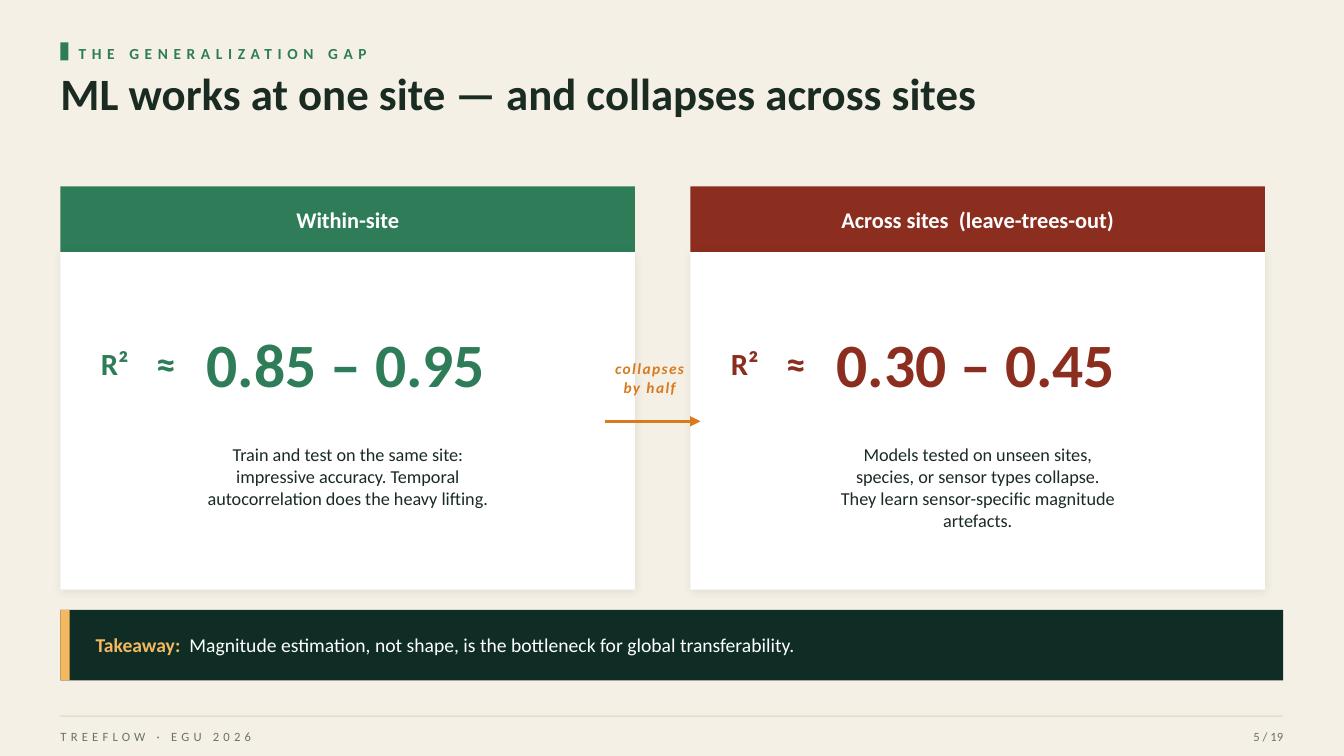
from lxml import etree
from pptx import Presentation
from pptx import util as u
from pptx.dml import color
from pptx.enum import shapes, text
from pptx.oxml import ns

COLOURS = {
    "paper": "F4F0E6", "ink": "1A2B22", "green": "2E7D58", "red": "8B2E1F",
    "white": "FFFFFF", "orange": "D97A1F", "forest": "0F2D24",
    "amber": "F4B860", "rule": "D8D2C2", "muted": "6B7268", "black": "000000",
}
LEFT, TOP, MIDDLE = text.PP_ALIGN.LEFT, text.MSO_ANCHOR.TOP, text.MSO_ANCHOR.MIDDLE
CENTER, RIGHT = text.PP_ALIGN.CENTER, text.PP_ALIGN.RIGHT
MARGIN, CONTENT_WIDTH = 43.2, 873.36


def rgb(name):
    return color.RGBColor.from_string(COLOURS[name])


def points(*lengths):
    return [u.Pt(length) for length in lengths]


def style(size, colour, spacing=0, **flags):
    return {"colour": colour, "spacing": spacing,
            "font": {"name": "Calibri", "size": u.Pt(size), **flags}}


def add_block(slide, box, colour):
    block = slide.shapes.add_shape(shapes.MSO_SHAPE.RECTANGLE, *points(*box))
    block.shadow.inherit = False
    block.fill.solid()
    block.fill.fore_color.rgb = rgb(colour)
    block.line.fill.background()
    return block


def add_soft_shadow(block):
    effects = block._element.spPr.find(ns.qn("a:effectLst"))
    shadow = etree.SubElement(effects, ns.qn("a:outerShdw"), blurRad=str(u.Pt(6)),
                              dist=str(u.Pt(1)), dir="5400000", rotWithShape="0")
    tint = etree.SubElement(shadow, ns.qn("a:srgbClr"), val=COLOURS["black"])
    etree.SubElement(tint, ns.qn("a:alpha"), val="8000")


def add_words(slide, box, paragraphs, align=LEFT, anchor=MIDDLE):
    frame = slide.shapes.add_textbox(*points(*box)).text_frame
    settings = {"word_wrap": True, "vertical_anchor": anchor, "margin_left": 0,
                "margin_top": 0, "margin_right": 0, "margin_bottom": 0}
    for key, value in settings.items():
        setattr(frame, key, value)
    for index, pieces in enumerate(paragraphs):
        paragraph = frame.add_paragraph() if index else frame.paragraphs[0]
        paragraph.alignment = align
        for words, look in pieces:
            run = paragraph.add_run()
            run.text = words
            for key, value in look["font"].items():
                setattr(run.font, key, value)
            run.font.color.rgb = rgb(look["colour"])
            if look["spacing"]:
                run._r.get_or_add_rPr().set("spc", str(round(look["spacing"] * 100)))


def add_header(slide, box, kicker, title):
    x, y, w, h = box
    add_block(slide, (x, y + 1.44, 5.76, 12.96), "green")
    add_words(slide, (x + 12.96, y, 432, 18),
              [[(kicker, style(11, "green", 4, bold=True))]])
    add_words(slide, (x, y + 18, w, h - 18),
              [[(title, style(32, "ink", bold=True))]], anchor=TOP)


def add_card(slide, box, colour, heading, score, explanation):
    x, y, w, h = box
    band = 46.8
    heading_style = style(16, "white", bold=True)
    wide_space = (" ", style(16, "white", 3.6, bold=True))
    pieces = [(heading[0], heading_style)]
    for part in heading[1:]:
        pieces += [wide_space, (part, heading_style)]
    add_block(slide, (x, y, w, band), colour)
    add_words(slide, (x, y, w, band), [pieces], CENTER)
    add_soft_shadow(add_block(slide, (x, y + band, w, h - band), "white"))
    for words, size, dx, dy, width, height in (
            ("R²", 22, 28.8, 100.8, 43.2, 50.4),
            ("≈", 28, 68.4, 100.8, 36, 50.4),
            (score, 44, 104.4, 86.4, 295.2, 79.2)):
        add_words(slide, (x + dx, y + dy, width, height),
                  [[(words, style(size, colour, bold=True))]])
    add_words(slide, (x + 28.8, y + 183.6, w - 57.6, 93.6),
              [[(line, style(13, "ink"))] for line in explanation], CENTER, TOP)


def add_collapse_arrow(slide, box, lines):
    x, y, w, h = box
    label = style(11, "orange", 1, bold=True, italic=True)
    add_words(slide, (x + 1.44, y, 61.2, 50.4), [[(line, label)] for line in lines], CENTER)
    arrow = slide.shapes.add_connector(
        shapes.MSO_CONNECTOR.STRAIGHT, *points(x, y + h, x + w, y + h))
    arrow.line.color.rgb = rgb("orange")
    arrow.line.width = u.Pt(2.5)
    etree.SubElement(arrow.line._get_or_add_ln(), ns.qn("a:tailEnd"), type="triangle")
    etree.SubElement(arrow._element.spPr, ns.qn("a:effectLst"))


def add_takeaway(slide, box, label, message):
    x, y, w, h = box
    add_block(slide, box, "forest")
    add_block(slide, (x, y, 6.48, h), "amber")
    add_words(slide, (x + 25.2, y, 828, h), [[
        (label, style(14, "amber", bold=True)),
        (" ", style(14, "amber", 3.2, bold=True)),
        (message, style(14, "white", bold=False)),
    ]])


def add_footer(slide, box, source, page):
    x, y, w, h = box
    add_block(slide, (x, y, w, 0.72), "rule")
    add_words(slide, (x, y + h - 18, 432, 18), [[(source, style(9, "muted", 3))]])
    add_words(slide, (x + w - 115.2, y + h - 18, 115.2, 18),
              [[(page, style(9, "muted"))]], RIGHT)


def main():
    deck = Presentation()
    deck.slide_width, deck.slide_height = points(960, 540)
    slide = deck.slides.add_slide(deck.slide_layouts[6])
    slide.background.fill.solid()
    slide.background.fill.fore_color.rgb = rgb("paper")

    add_header(slide, (MARGIN, 28.8, 864, 79.2), "THE GENERALIZATION GAP",
               "ML works at one site — and collapses across sites")
    cards = (
        ("green", ["Within-site"], "0.85 – 0.95",
         ["Train and test on the same site:",
          "impressive accuracy. Temporal",
          "autocorrelation does the heavy lifting."]),
        ("red", ["Across sites", "(leave-trees-out)"], "0.30 – 0.45",
         ["Models tested on unseen sites,",
          "species, or sensor types collapse.",
          "They learn sensor-specific magnitude",
          "artefacts."]),
    )
    card_width, gap = 410.4, 39.6
    for column, card in enumerate(cards):
        card_left = MARGIN + column * (card_width + gap)
        add_card(slide, (card_left, 133.2, card_width, 288), *card)
    add_collapse_arrow(slide, (432, 244.8, 68.4, 56.16), ["collapses", "by half"])
    add_takeaway(slide, (MARGIN, 435.6, CONTENT_WIDTH, 50.4), "Takeaway:",
                 "Magnitude estimation, not shape, is the bottleneck for global transferability.")
    add_footer(slide, (MARGIN, 511.2, CONTENT_WIDTH, 23.76), "TREEFLOW · EGU 2026", "5 / 19")
    deck.save("out.pptx")


if __name__ == "__main__":
    main()
